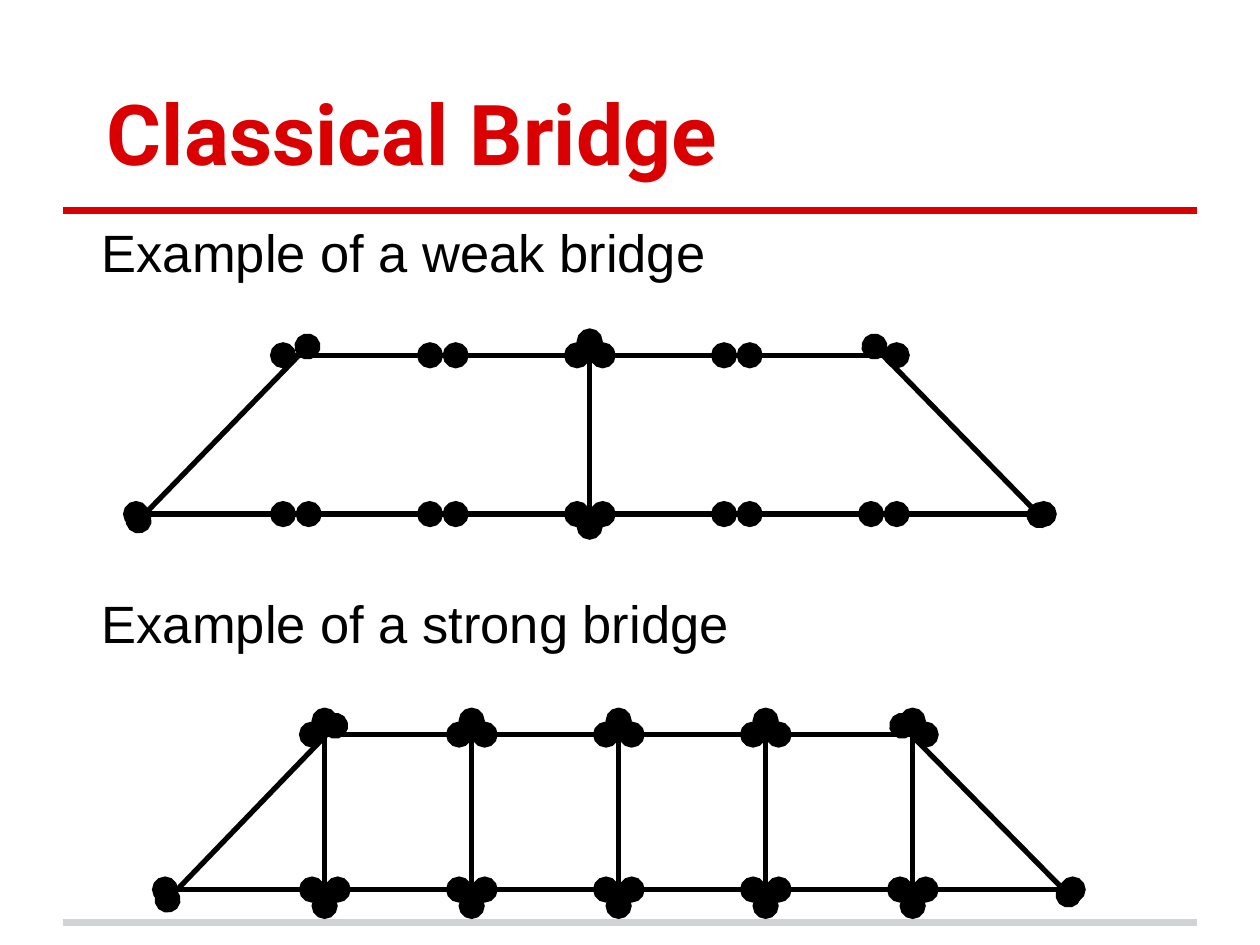
import pptx
import pptx.util
import pptx.dml.color
import pptx.enum.shapes
import pptx.enum.text
import pptx.oxml.ns
import lxml.etree

presentation = pptx.Presentation()
presentation.slide_width = pptx.util.Inches(10)
presentation.slide_height = pptx.util.Inches(7.5)
slide = presentation.slides.add_slide(presentation.slide_layouts[6])
column = presentation.slide_width / 10
row = presentation.slide_height / 7.5


def color(hex_string):
    return pptx.dml.color.RGBColor.from_string(hex_string)


def add_line(start, end, line_color, width, round_ends=False):
    connector = slide.shapes.add_connector(
        pptx.enum.shapes.MSO_CONNECTOR.STRAIGHT,
        round(start[0] * column), round(start[1] * row),
        round(end[0] * column), round(end[1] * row))
    connector.line.color.rgb = color(line_color)
    connector.line.width = pptx.util.Pt(width)
    properties = connector._element.spPr
    lxml.etree.SubElement(properties, pptx.oxml.ns.qn("a:effectLst"))
    if round_ends:
        outline = connector.line._get_or_add_ln()
        for tag in ("a:headEnd", "a:tailEnd"):
            lxml.etree.SubElement(outline, pptx.oxml.ns.qn(tag), type="oval", w="lg", len="lg")


for rule_y, rule_color in ((7.32, "CFD4D4"), (1.67, "DA0002")):
    add_line((0.5, rule_y), (9.5, rule_y), rule_color, 4)

bay = 7 / 6
beam_length = 1.37
post_offset = 0.1
bridges = [
    {"left": 1.08, "top": 2.82, "bottom": 4.08, "posts": [3], "post_ends": (2.71, 4.18),
     "diagonals": [((1.1, 4.13), (2.44, 2.75)), ((6.94, 2.75), (8.25, 4.09))]},
    {"left": 1.31, "top": 5.83, "bottom": 7.06, "posts": range(1, 6), "post_ends": (5.72, 7.19),
     "diagonals": [((1.33, 7.14), (2.66, 5.76)), ((7.16, 5.76), (8.48, 7.1))]},
]

for bridge in bridges:
    members = list(bridge["diagonals"])
    for level, bays in (("bottom", range(6)), ("top", range(1, 5))):
        for index in bays:
            x = bridge["left"] + index * bay
            members.append(((x, bridge[level]), (x + beam_length, bridge[level])))
    for index in bridge["posts"]:
        x = bridge["left"] + index * bay + post_offset
        members.append(tuple((x, y) for y in bridge["post_ends"]))
    for start, end in members:
        add_line(start, end, "000000", 3, round_ends=True)

anchors = pptx.enum.text.MSO_ANCHOR
text_blocks = [
    (0.3, 1.25, anchors.BOTTOM, 0.25, 0, "Roboto", 48, True, "DA0002",
     [("Classical Bridge", 0)]),
    (1.65, 5.43, anchors.TOP, 0.38, -0.17, "Arial", 30, False, "000000",
     [("Example of a weak bridge", 6), ("Example of a strong bridge", 176)]),
]

for top, height, anchor, margin, indent, font_name, size, bold, text_color, lines in text_blocks:
    box = slide.shapes.add_textbox(
        round(0.5 * column), round(top * row), round(9 * column), round(height * row))
    text_frame = box.text_frame
    text_frame.word_wrap = True
    text_frame.vertical_anchor = anchor
    for side in ("left", "top", "right", "bottom"):
        setattr(text_frame, "margin_" + side, pptx.util.Inches(0.1))
    text_frame.text = "\n".join(text for text, space in lines)
    for paragraph, (text, space) in zip(text_frame.paragraphs, lines):
        paragraph.space_before = pptx.util.Pt(space)
        paragraph_properties = paragraph._p.get_or_add_pPr()
        paragraph_properties.set("marL", str(round(margin * column)))
        paragraph_properties.set("indent", str(round(indent * column)))
        font = paragraph.runs[0].font
        font.name = font_name
        font.size = pptx.util.Pt(size)
        font.bold = bold
        font.color.rgb = color(text_color)

presentation.save("out.pptx")
